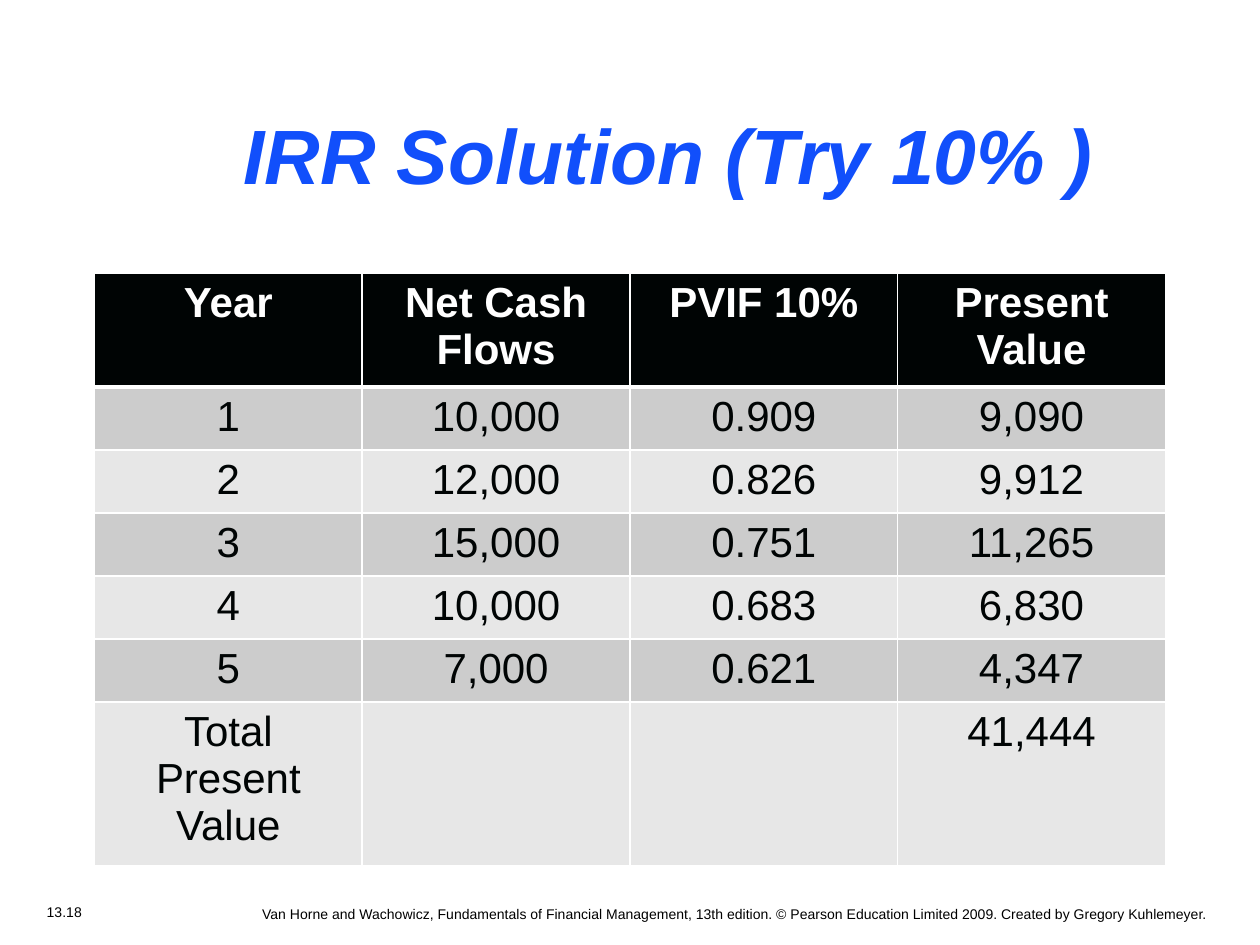
from lxml import etree
from pptx import Presentation
from pptx.dml.color import RGBColor
from pptx.enum.text import MSO_ANCHOR, MSO_AUTO_SIZE, PP_ALIGN
from pptx.oxml.ns import qn
from pptx.util import Inches, Pt

LEFT, CENTER, RIGHT = PP_ALIGN.LEFT, PP_ALIGN.CENTER, PP_ALIGN.RIGHT
MIDDLE = MSO_ANCHOR.MIDDLE
GROW = MSO_AUTO_SIZE.SHAPE_TO_FIT_TEXT
TITLE_ONLY = 5

COLORS = {
    "title": "114FFB",
    "ink": "000404",
    "footer": "000000",
    "white": "FFFFFF",
    "dark_band": "CCCCCC",
    "light_band": "E7E7E7",
}

CASH_FLOWS = [
    ("Year", "Net Cash Flows", "PVIF 10%", "Present Value"),
    ("1", "10,000", "0.909", "9,090"),
    ("2", "12,000", "0.826", "9,912"),
    ("3", "15,000", "0.751", "11,265"),
    ("4", "10,000", "0.683", "6,830"),
    ("5", "7,000", "0.621", "4,347"),
    ("Total Present Value", "", "", "41,444"),
]


class Deck:
    font = "Arial"
    width, height = Inches(10), Inches(7.5)
    columns, rows = 100, 75

    def __init__(self):
        self.presentation = Presentation()
        self.presentation.slide_width = self.width
        self.presentation.slide_height = self.height
        layout = self.presentation.slide_layouts[TITLE_ONLY]
        self.slide = self.presentation.slides.add_slide(layout)

    def place(self, column, row, across, down):
        column_width = self.width / self.columns
        row_height = self.height / self.rows
        return (round(column * column_width), round(row * row_height),
                round(across * column_width), round(down * row_height))

    def add_text(self, frame, text, size, color, align, bold=False, italic=False):
        paragraph = frame.paragraphs[0]
        paragraph.alignment = align
        run = paragraph.add_run()
        run.text = text
        run.font.name = self.font
        run.font.size = Pt(size)
        run.font.bold = bold
        run.font.italic = italic
        run.font.color.rgb = RGBColor.from_string(COLORS[color])

    def title(self, text, area):
        heading = self.slide.shapes.title
        heading.left, heading.top, heading.width, heading.height = self.place(*area)
        frame = heading.text_frame
        frame.vertical_anchor = MIDDLE
        frame.word_wrap = True
        frame.auto_size = GROW
        self.add_text(frame, text, 44, "title", LEFT, bold=True, italic=True)

    def footer(self, text, area, align, wrap):
        frame = self.slide.shapes.add_textbox(*self.place(*area)).text_frame
        frame.word_wrap = wrap
        self.add_text(frame, text, 8, "footer", align)

    def border(self, cell, top, bottom):
        properties = cell._tc.get_or_add_tcPr()
        sides = {"a:lnL": 1, "a:lnR": 1, "a:lnT": top, "a:lnB": bottom}
        for position, (side, points) in enumerate(sides.items()):
            line = etree.Element(qn(side), w=str(Pt(points)))
            fill = etree.SubElement(line, qn("a:solidFill"))
            etree.SubElement(fill, qn("a:srgbClr"), val=COLORS["white"])
            properties.insert(position, line)

    def table(self, records, area, row_share):
        holder = self.slide.shapes.add_table(
            len(records), len(records[0]), *self.place(*area))
        grid = holder.table
        for row, record in enumerate(records):
            grid.rows[row].height = self.place(0, 0, 0, row_share)[3]
            header = row == 0
            band = "ink" if header else "dark_band" if row % 2 else "light_band"
            for column, value in enumerate(record):
                cell = grid.cell(row, column)
                cell.fill.solid()
                cell.fill.fore_color.rgb = RGBColor.from_string(COLORS[band])
                self.border(cell, 3 if row == 1 else 1, 3 if header else 1)
                if value:
                    self.add_text(cell.text_frame, value, 24,
                                  "white" if header else "ink", CENTER, bold=header)
        holder.height = self.place(*area)[3]

    def save(self):
        self.presentation.save("out.pptx")


def main():
    deck = Deck()
    deck.footer("13.18", (0.7, 71.2, 8.8, 2.4), CENTER, False)
    deck.footer(
        "Van Horne and Wachowicz, Fundamentals of Financial Management, "
        "13th edition. © Pearson Education Limited 2009. "
        "Created by Gregory Kuhlemeyer.",
        (2.4, 71.4, 94.5, 2.1), RIGHT, True)
    deck.title("IRR Solution (Try 10% )", (18.3, 8, 74.2, 8.4))
    deck.table(CASH_FLOWS, (7.5, 21.7, 85, 47), 4.1)
    deck.save()


if __name__ == "__main__":
    main()
